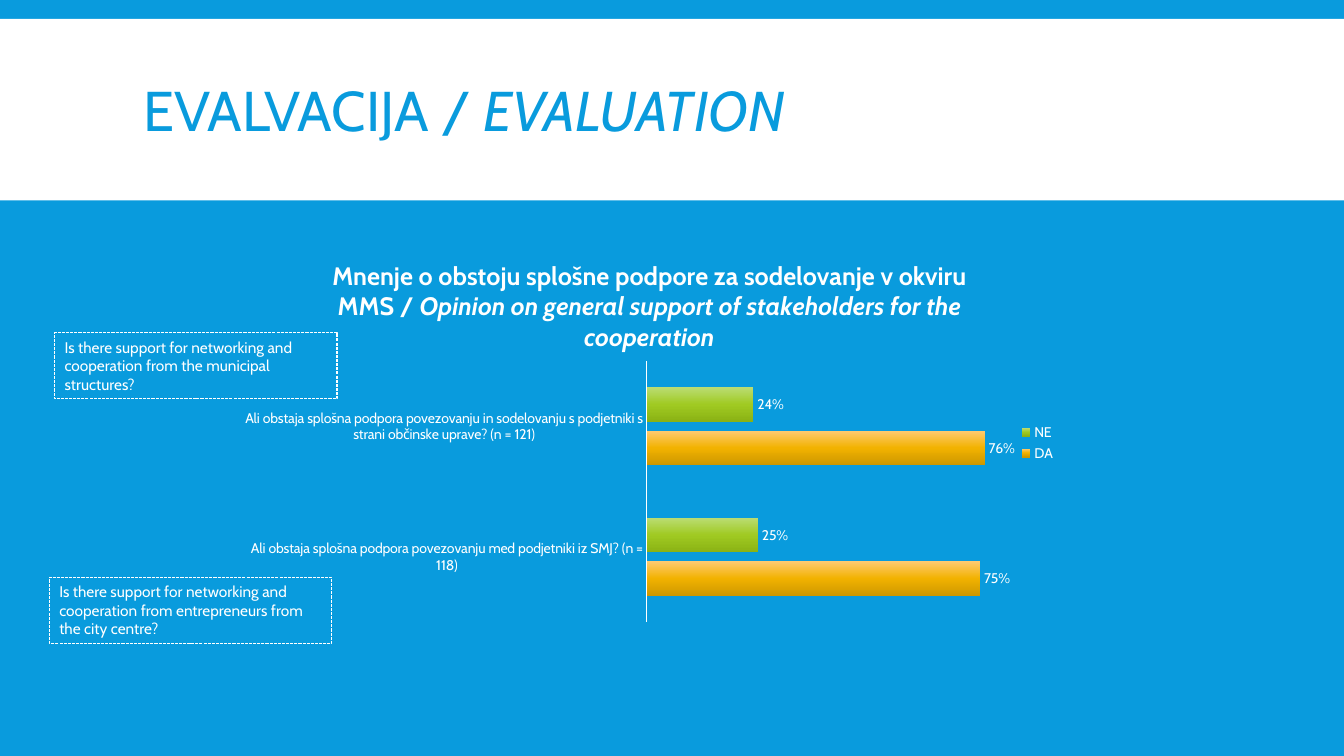
"""Build the evaluation slide with its support survey bar chart."""
from copy import deepcopy
from dataclasses import dataclass

from lxml import etree
from pptx import Presentation
from pptx import util as u
from pptx.chart.data import CategoryChartData
from pptx.dml.color import RGBColor
from pptx.enum import chart as ch, dml, shapes, text
from pptx.oxml.ns import qn

PX = 9525
FONT = "Cabin"
COLOURS = {
    "blue": "099BDD", "white": "FFFFFF",
    "green_light": "BBDD75", "green": "A0CA22", "green_dark": "8AB214",
    "amber_light": "FFCB73", "amber": "F2B200", "amber_dark": "CC9700",
}


@dataclass(frozen=True)
class Box:
    left: int
    top: int
    width: int
    height: int

    def emu(self) -> tuple[int, ...]:
        return tuple(n * PX for n in (self.left, self.top, self.width, self.height))


@dataclass(frozen=True)
class Note:
    box: Box
    question: str


@dataclass(frozen=True)
class Answer:
    name: str
    shares: tuple[float, ...]
    shade: str


NOTES = (
    Note(Box(52, 317, 269, 63),
         "Is there support for networking and cooperation from the municipal structures?"),
    Note(Box(47, 550, 269, 63),
         "Is there support for networking and cooperation from entrepreneurs from the city centre?"),
)
QUESTIONS = (
    "Ali obstaja splošna podpora povezovanju med podjetniki iz SMJ? (n = 118)",
    "Ali obstaja splošna podpora povezovanju in sodelovanju s podjetniki s strani občinske uprave? (n = 121)",
)
ANSWERS = (Answer("DA", (0.75, 0.76), "amber"), Answer("NE", (0.25, 0.24), "green"))


def rgb(name: str) -> RGBColor:
    return RGBColor.from_string(COLOURS[name])


def style(font, size: float, colour: str = "white", bold: bool = False, italic: bool = False) -> None:
    font.name, font.size = FONT, u.Pt(size)
    font.bold, font.italic = bold, italic
    font.color.rgb = rgb(colour)


def add_run(paragraph, words: str, size: float, **look) -> None:
    run = paragraph.add_run()
    run.text = words
    style(run.font, size, **look)


def add_band(slide) -> None:
    band = slide.shapes.add_shape(shapes.MSO_SHAPE.RECTANGLE, *Box(0, 18, 1280, 173).emu())
    band.shadow.inherit = False
    band.fill.solid()
    band.fill.fore_color.rgb = rgb("white")
    band.line.fill.background()
    slide.shapes._spTree.insert(2, band._element)


def add_heading(slide) -> None:
    heading = slide.shapes.title
    heading.left, heading.top, heading.width, heading.height = Box(127, 30, 1027, 158).emu()
    frame = heading.text_frame
    frame.vertical_anchor = text.MSO_ANCHOR.MIDDLE
    frame.auto_size = text.MSO_AUTO_SIZE.NONE
    line = frame.paragraphs[0]
    line.alignment, line.line_spacing = text.PP_ALIGN.LEFT, 0.85
    add_run(line, "EVALVACIJA / ", 40, colour="blue")
    add_run(line, "EVALUATION", 40, colour="blue", italic=True)


def add_note(slide, note: Note) -> None:
    frame_box = slide.shapes.add_shape(shapes.MSO_SHAPE.RECTANGLE, *note.box.emu())
    frame_box.shadow.inherit = False
    frame_box.fill.background()
    frame_box.line.color.rgb = rgb("white")
    frame_box.line.width = u.Pt(0.75)
    frame_box.line.dash_style = dml.MSO_LINE.SQUARE_DOT
    frame = frame_box.text_frame
    frame.word_wrap = True
    frame.auto_size = text.MSO_AUTO_SIZE.SHAPE_TO_FIT_TEXT
    frame.vertical_anchor = text.MSO_ANCHOR.TOP
    frame.paragraphs[0].alignment = text.PP_ALIGN.LEFT
    add_run(frame.paragraphs[0], note.question, 11)


def shade_bars(series, shade: str) -> None:
    fill = series.format.fill
    fill.gradient()
    fill.gradient_angle = 270
    stops = series._element.find(".//" + qn("a:gsLst"))
    stops.insert(1, deepcopy(stops[0]))
    ramp = ((0, f"{shade}_light"), (0.5, shade), (1, f"{shade}_dark"))
    for stop, (position, colour) in zip(fill.gradient_stops, ramp):
        stop.position = position
        stop.color.rgb = rgb(colour)


def place_plot(chart) -> None:
    plot_area = chart._chartSpace.chart.plotArea
    for old in plot_area.findall(qn("c:layout")):
        plot_area.remove(old)
    layout = etree.Element(qn("c:layout"))
    manual = etree.SubElement(layout, qn("c:manualLayout"))
    settings = (("layoutTarget", "inner"), ("xMode", "edge"), ("yMode", "edge"),
                ("x", "0.497"), ("y", "0.296"), ("w", "0.427"), ("h", "0.653"))
    for tag, value in settings:
        etree.SubElement(manual, qn(f"c:{tag}")).set("val", value)
    plot_area.insert(0, layout)


def add_survey(slide) -> None:
    survey = CategoryChartData(number_format="0%")
    survey.categories = QUESTIONS
    for answer in ANSWERS:
        survey.add_series(answer.name, answer.shares)
    chart = slide.shapes.add_chart(
        ch.XL_CHART_TYPE.BAR_CLUSTERED, *Box(222, 231, 793, 381).emu(), survey).chart
    style(chart.font, 10)

    chart.has_title = True
    chart.chart_title.include_in_layout = False
    caption = chart.chart_title.text_frame.paragraphs[0]
    add_run(caption, "Mnenje o obstoju splošne podpore za sodelovanje v okviru MMS / ", 18, bold=True)
    add_run(caption, "Opinion on general support of stakeholders for the cooperation", 18,
            bold=True, italic=True)

    chart.has_legend = True
    chart.legend.position = ch.XL_LEGEND_POSITION.RIGHT
    chart.legend.include_in_layout = True
    style(chart.legend.font, 10)

    questions, shares = chart.category_axis, chart.value_axis
    questions.major_tick_mark = questions.minor_tick_mark = ch.XL_TICK_MARK.NONE
    questions.format.line.color.rgb = rgb("white")
    questions.format.line.width = u.Pt(0.75)
    style(questions.tick_labels.font, 10)
    shares.visible = False
    shares.has_major_gridlines = False
    shares.minimum_scale, shares.maximum_scale = 0, 0.8

    plot = chart.plots[0]
    plot.gap_width, plot.overlap, plot.vary_by_categories = 150, -25, False
    for series, answer in zip(plot.series, ANSWERS):
        shade_bars(series, answer.shade)
        labels = series.data_labels
        labels.show_value = True
        labels.number_format, labels.number_format_is_linked = "0%", False
        labels.position = ch.XL_LABEL_POSITION.OUTSIDE_END
        style(labels.font, 10)
    place_plot(chart)


def main() -> None:
    deck = Presentation()
    deck.slide_width, deck.slide_height = 1280 * PX, 720 * PX
    slide = deck.slides.add_slide(deck.slide_layouts[5])
    slide.background.fill.solid()
    slide.background.fill.fore_color.rgb = rgb("blue")
    add_band(slide)
    add_heading(slide)
    add_survey(slide)
    for note in NOTES:
        add_note(slide, note)
    deck.save("out.pptx")


if __name__ == "__main__":
    main()
